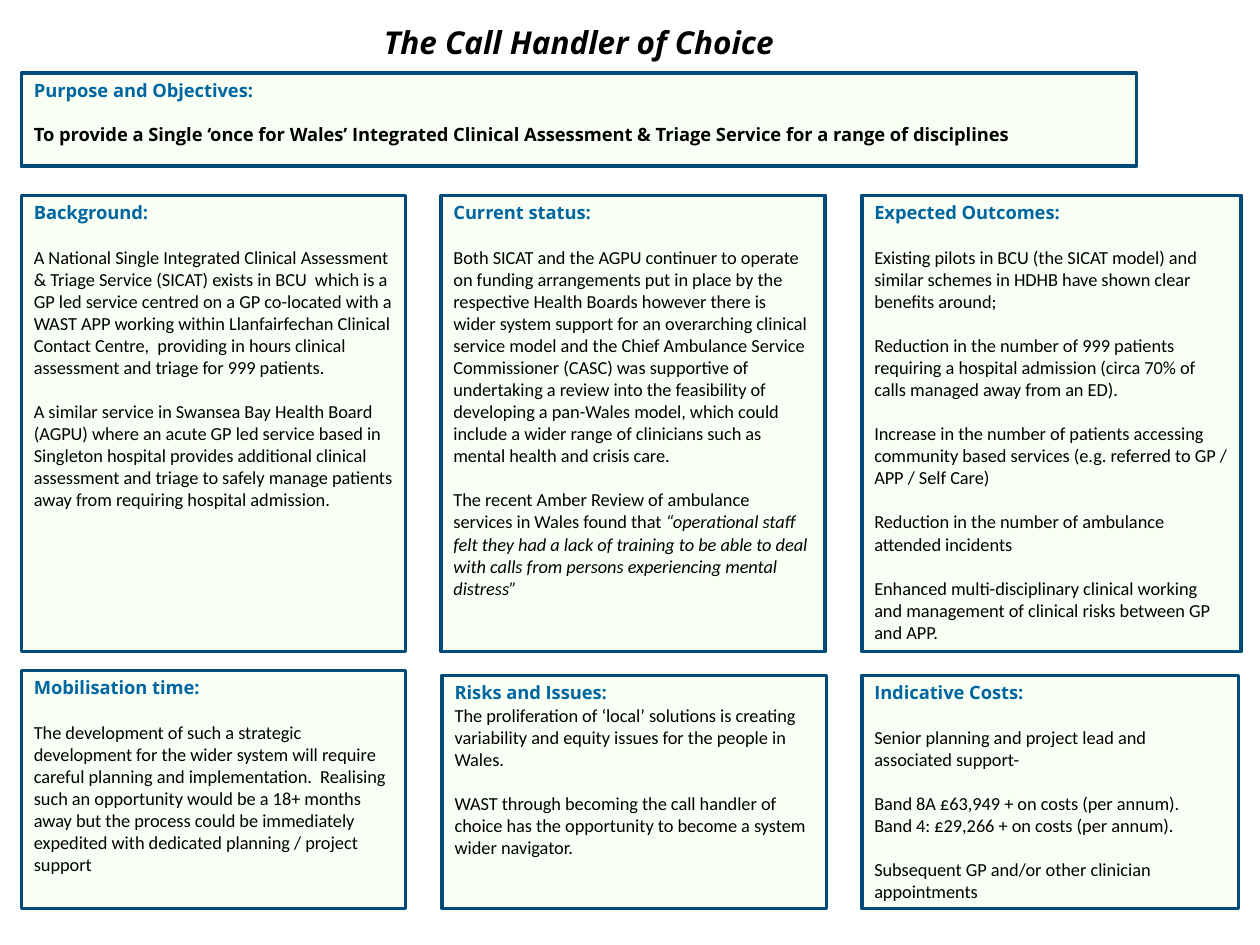
from lxml import etree
from pptx import Presentation
from pptx.dml.color import RGBColor
from pptx.enum import shapes, text
from pptx.oxml.ns import qn
from pptx.util import Inches, Pt

NAVY = RGBColor(0x00, 0x4B, 0x77)
BLUE = RGBColor(0x00, 0x66, 0xA1)
PALE_GREEN = RGBColor(0xCC, 0xFF, 0x99)
BLACK = RGBColor(0, 0, 0)
HEADING_FONT, BODY_FONT = "Open Sans", "Calibri"
LINE = Pt(12.6)

# Columns and rows of the panel grid
COL_1, COL_2, COL_3 = 0.17, 3.5, 6.84
MIDDLE, BOTTOM = 1.55, 5.36

PURPOSE = "To provide a Single ‘once for Wales’ Integrated Clinical Assessment & Triage Service for a range of disciplines"

# Box, heading, blocks of text; a line break in a block starts a paragraph without a gap
PANELS = [
    ((COL_1, MIDDLE, 3.05, 3.62), "Background:", [
        "A National Single Integrated Clinical Assessment & Triage Service (SICAT) exists in BCU  which is a GP led service centred on a GP co-located with a WAST APP working within Llanfairfechan Clinical Contact Centre,  providing in hours clinical assessment and triage for 999 patients.",
        "A similar service in Swansea Bay Health Board (AGPU) where an acute GP led service based in Singleton hospital provides additional clinical assessment and triage to safely manage patients away from requiring hospital admission.",
    ]),
    ((COL_2, MIDDLE, 3.05, 3.62), "Current status:", [
        "Both SICAT and the AGPU continuer to operate on funding arrangements put in place by the respective Health Boards however there is  wider system support for an overarching clinical service model and the Chief Ambulance Service Commissioner (CASC) was supportive of undertaking a review into the feasibility of developing a pan-Wales model, which could include a wider range of clinicians such as mental health and crisis care.",
        "The recent Amber Review of ambulance services in Wales found that “operational staff felt they had a lack of training to be able to deal with calls from persons experiencing mental distress”",
    ]),
    ((COL_3, MIDDLE, 3.01, 3.62), "Expected Outcomes:", [
        "Existing pilots in BCU (the SICAT model) and similar schemes in HDHB have shown clear benefits around;",
        "Reduction in the number of 999 patients requiring a hospital admission (circa 70% of calls managed away from an ED).",
        "Increase in the number of patients accessing community based services (e.g. referred to GP / APP / Self Care)",
        "Reduction in the number of ambulance attended incidents",
        "Enhanced multi-disciplinary clinical working and management of clinical risks between GP and APP.",
    ]),
    ((COL_1, 5.32, 3.05, 1.89), "Mobilisation time:", [
        "The development of such a strategic development for the wider system will require careful planning and implementation.  Realising such an opportunity would be a 18+ months away but the process could be immediately expedited with dedicated planning / project support",
    ]),
    ((COL_2 + 0.01, BOTTOM, 3.05, 1.85), "Risks and Issues:", [
        "The proliferation of ‘local’ solutions is creating variability and equity issues for the people in Wales.",
        "WAST through becoming the call handler of choice has the opportunity to become a system wider navigator.",
    ]),
    ((COL_3, BOTTOM, 2.99, 1.85), "Indicative Costs:", [
        "Senior planning and project lead and associated support-",
        "Band 8A £63,949 + on costs (per annum).\nBand 4: £29,266 + on costs (per annum).",
        "Subsequent GP and/or other clinician appointments",
    ]),
]


def style(paragraph, font_name, color, bold, gap):
    paragraph.alignment = text.PP_ALIGN.LEFT
    paragraph.line_spacing = LINE
    paragraph.space_before = LINE if gap else Pt(0)
    font = paragraph.font
    font.name, font.size, font.bold = font_name, Pt(10.5), bold
    font.color.rgb = color


def add_title(slide, box, wording):
    title = slide.shapes.title
    title.left, title.top, title.width, title.height = map(Inches, box)
    frame = title.text_frame
    frame.text = wording
    frame.vertical_anchor = text.MSO_ANCHOR.TOP
    frame.auto_size = text.MSO_AUTO_SIZE.NONE
    line = frame.paragraphs[0]
    line.alignment = text.PP_ALIGN.CENTER
    font = line.font
    font.name, font.size, font.bold, font.italic = HEADING_FONT, Pt(18), True, True
    font.color.rgb = BLACK


def add_panel(slide, box, heading, blocks, body_font=BODY_FONT, bold=False, heading_gap=True):
    panel = slide.shapes.add_shape(shapes.MSO_SHAPE.RECTANGLE, *map(Inches, box))
    panel.shadow.inherit = False
    panel.line.color.rgb = NAVY
    panel.line.width = Pt(2)

    # Pale green at 10 % opacity
    panel.fill.solid()
    panel.fill.fore_color.rgb = PALE_GREEN
    tint = panel._element.spPr.find(qn("a:solidFill")).find(qn("a:srgbClr"))
    etree.SubElement(tint, qn("a:alpha")).set("val", "10000")

    # Heading
    frame = panel.text_frame
    frame.word_wrap = True
    frame.vertical_anchor = text.MSO_ANCHOR.TOP
    first = frame.paragraphs[0]
    first.text = heading
    style(first, HEADING_FONT, BLUE, True, False)

    # Body, with quotations in italics
    for block_no, block in enumerate(blocks):
        for line_no, wording in enumerate(block.split("\n")):
            paragraph = frame.add_paragraph()
            plain, mark, quotation = wording.partition("“")
            paragraph.add_run().text = plain
            if mark:
                quote = paragraph.add_run()
                quote.text = mark + quotation
                quote.font.italic = True
            gap = line_no == 0 and (block_no > 0 or heading_gap)
            style(paragraph, body_font, BLACK, bold, gap)


def main():
    deck = Presentation()
    deck.slide_width, deck.slide_height = Inches(10), Inches(7.5)
    slide = deck.slides.add_slide(deck.slide_layouts[5])

    add_title(slide, (0.2, 0.13, 8.79, 0.4), "The Call Handler of Choice")
    add_panel(slide, (COL_1, 0.58, 8.85, 0.74), "Purpose and Objectives:", [PURPOSE],
              body_font=HEADING_FONT, bold=True)
    for box, heading, blocks in PANELS:
        add_panel(slide, box, heading, blocks, heading_gap=heading != "Risks and Issues:")

    deck.save("out.pptx")


if __name__ == "__main__":
    main()
